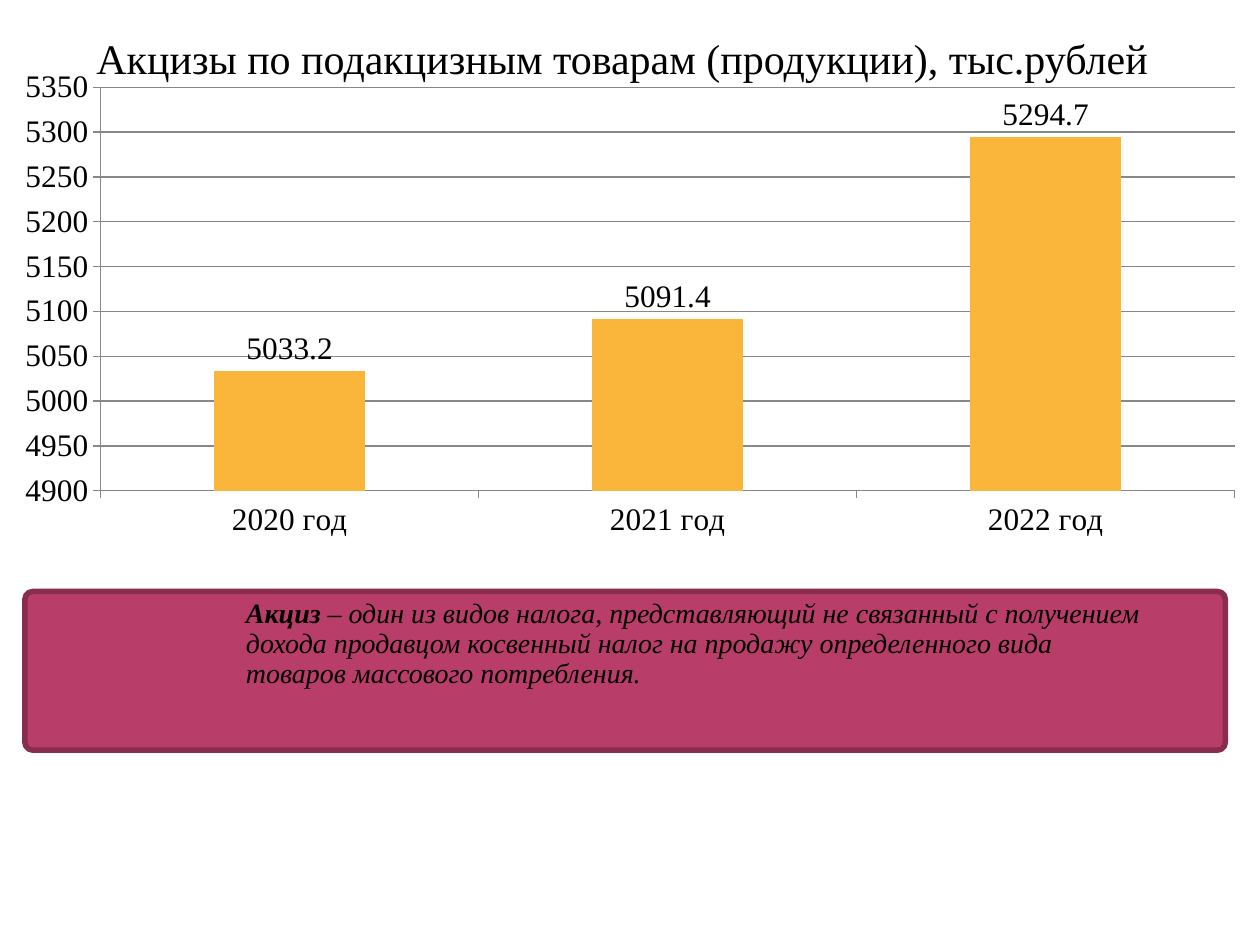
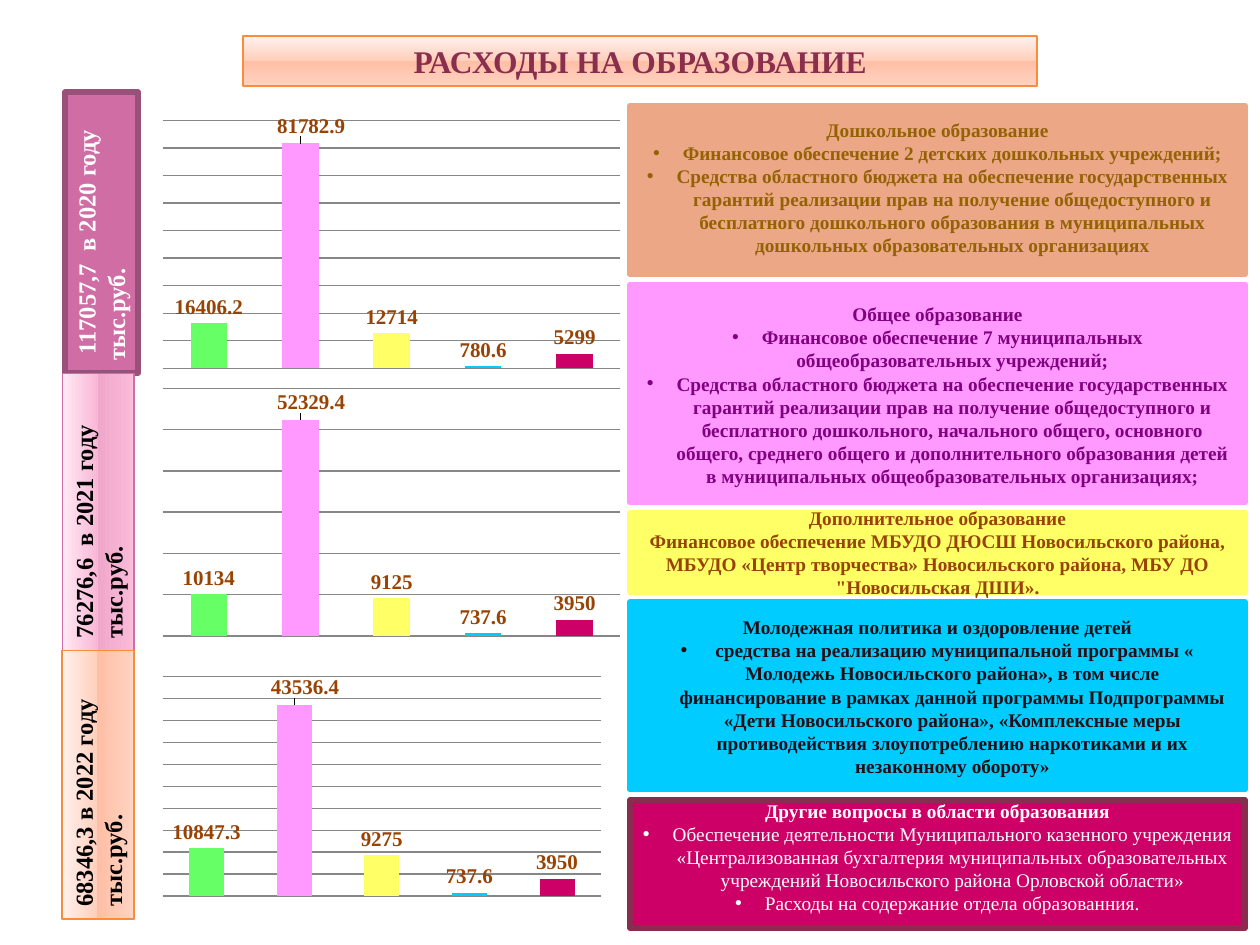
from lxml import etree
from pptx import Presentation
from pptx.chart.data import CategoryChartData
from pptx.dml.color import RGBColor
from pptx.enum.chart import XL_CHART_TYPE, XL_LABEL_POSITION, XL_TICK_MARK
from pptx.enum.shapes import MSO_SHAPE
from pptx.enum.text import MSO_ANCHOR, MSO_AUTO_SIZE, PP_ALIGN
from pptx.oxml.ns import qn
from pptx.util import Pt

COLUMNS = XL_CHART_TYPE.COLUMN_CLUSTERED
OUTSIDE_END = XL_LABEL_POSITION.OUTSIDE_END
TICK_OUTSIDE = XL_TICK_MARK.OUTSIDE
RECTANGLE = MSO_SHAPE.RECTANGLE
ROUNDED = MSO_SHAPE.ROUNDED_RECTANGLE
TOP, MIDDLE = MSO_ANCHOR.TOP, MSO_ANCHOR.MIDDLE
LEFT, CENTER = PP_ALIGN.LEFT, PP_ALIGN.CENTER
NO_AUTOFIT = MSO_AUTO_SIZE.NONE

SERIF = "Times New Roman"
BLACK, WHITE = "000000", "FFFFFF"
RASPBERRY, WINE, BROWN, GRAY = "B83D68", "882D4D", "984204", "878787"
ORANGE, MAUVE = "FA8D3D", "CF6DA4"
PEACH_GLOSS = ("FFF2EE", "FFCFBD", "FFBFA5", "FFCFBD", "FFD7C8")
PINK_GLOSS = ("FFEAF4", "F9B7D7", "EFA7CB", "F9B7D7", "F8C4DD")
GLOSS_STOPS = (0, 49, 49, 92, 100)
SECTOR_COLORS = ("66FF66", "FF99FF", "FFFF66", "00CCFF", "CC0066")
THICK, THIN = 3.15, 0.9
INSETS = (7.2, 3.6, 7, 3.6)
BULLET_INDENT = 17


def rgb(color):
    return RGBColor.from_string(color)


class Deck:
    def __init__(self):
        self.presentation = Presentation()
        self.presentation.slide_width = Pt(720)
        self.presentation.slide_height = Pt(540)
        self.slide = None

    def add_slide(self):
        layout = self.presentation.slide_layouts[5]
        self.slide = self.presentation.slides.add_slide(layout)

    def font(self, font, size, color, bold=False, italic=False):
        font.name = SERIF
        font.size = Pt(size)
        font.bold = bold
        font.italic = italic
        font.color.rgb = rgb(color)

    def paint(self, shape, fill, line, width):
        if isinstance(fill, str):
            shape.fill.solid()
            shape.fill.fore_color.rgb = rgb(fill)
        else:
            shape.fill.gradient()
            shape.fill.gradient_angle = 270
            stops = shape.element.spPr.find(qn("a:gradFill")).find(qn("a:gsLst"))
            for stop in list(stops):
                stops.remove(stop)
            for position, color in zip(GLOSS_STOPS, fill):
                stop = etree.SubElement(stops, qn("a:gs"), pos=str(position * 1000))
                etree.SubElement(stop, qn("a:srgbClr"), val=color)
        shape.line.color.rgb = rgb(line)
        shape.line.width = Pt(width)

    def frame(self, shape, anchor, insets=INSETS):
        frame = shape.text_frame
        frame.word_wrap = True
        frame.auto_size = NO_AUTOFIT
        frame.vertical_anchor = anchor
        frame.margin_left, frame.margin_top, frame.margin_right, frame.margin_bottom = map(Pt, insets)
        return frame

    def paragraph(self, frame, runs, align, size, color, bulleted=False, spacing=None):
        first = frame.paragraphs[0]
        paragraph = frame.add_paragraph() if first.runs else first
        paragraph.alignment = align
        if spacing:
            paragraph.line_spacing = spacing
        if bulleted:
            properties = paragraph._p.get_or_add_pPr()
            properties.set("marL", str(Pt(BULLET_INDENT)))
            properties.set("indent", str(-Pt(BULLET_INDENT)))
            etree.SubElement(properties, qn("a:buFont"), typeface="Arial")
            etree.SubElement(properties, qn("a:buChar"), char="•")
        for text, bold, italic in runs:
            run = paragraph.add_run()
            run.text = text
            self.font(run.font, size, color, bold, italic)

    def title(self, text, box, size, color, bold=False):
        title = self.slide.shapes.title
        title.left, title.top, title.width, title.height = map(Pt, box)
        frame = self.frame(title, MIDDLE)
        self.paragraph(frame, [(text, bold, False)], CENTER, size, color)
        return title

    def block(self, kind, box, fill, line, width):
        shape = self.slide.shapes.add_shape(kind, *map(Pt, box))
        shape.shadow.inherit = False
        self.paint(shape, fill, line, width)
        return shape

    def text_box(self, box, insets):
        return self.frame(self.slide.shapes.add_textbox(*map(Pt, box)), TOP, insets)

    def year_label(self, box, lines, fill, line, width, color):
        shape = self.block(RECTANGLE, box, fill, line, width)
        shape.rotation = 270
        frame = self.frame(shape, TOP)
        for text in lines:
            self.paragraph(frame, [(text, True, False)], LEFT, 14, color)

    def panel(self, box, fill, line, color, heading, items, bulleted, bold, shift):
        shape = self.block(RECTANGLE, box, fill, line, THICK)
        left, top, right, bottom = INSETS
        insets = (left, top + max(shift, 0), right, bottom + max(-shift, 0))
        frame = self.frame(shape, MIDDLE, insets)
        self.paragraph(frame, [(heading, True, False)], CENTER, 11, color)
        for item in items:
            self.paragraph(frame, [(item, bold, False)], CENTER, 11, color, bulleted)

    def column_chart(self, box, plot, categories, values, scale, label, colors=None):
        data = CategoryChartData()
        data.categories = categories
        data.add_series("Series 1", values)
        chart = self.slide.shapes.add_chart(COLUMNS, *map(Pt, box), data).chart
        chart.has_legend = False
        chart.has_title = False
        self.font(chart.font, 17.9, BLACK)
        area = chart.element.find(qn("c:chart")).find(qn("c:plotArea"))
        layout = area.find(qn("c:layout"))
        if layout is None:
            layout = etree.Element(qn("c:layout"))
            area.insert(0, layout)
        modes = [("layoutTarget", "inner"), ("xMode", "edge"), ("yMode", "edge")]
        self.manual_layout(layout, modes + list(zip("xywh", plot)))

        axis = chart.value_axis
        axis.minimum_scale, axis.maximum_scale, axis.major_unit = scale
        axis.has_major_gridlines = True
        for line in (axis.major_gridlines.format.line, axis.format.line, chart.category_axis.format.line):
            line.color.rgb = rgb(GRAY)
            line.width = Pt(0.75)
        for each in (axis, chart.category_axis):
            each.visible = colors is None
            each.major_tick_mark = TICK_OUTSIDE

        columns = chart.plots[0]
        columns.gap_width = 150
        columns.vary_by_categories = False
        series = columns.series[0]
        series.format.fill.solid()
        series.format.fill.fore_color.rgb = rgb("FAB63A" if colors is None else RASPBERRY)
        labels = series.data_labels
        labels.show_value = True
        labels.position = OUTSIDE_END
        self.font(labels.font, *label)
        for index, color in enumerate(colors or ()):
            fill = series.points[index].format.fill
            fill.solid()
            fill.fore_color.rgb = rgb(color)
        if colors:
            self.nudge_label(series.points[1].data_label, labels, label)

    def nudge_label(self, data_label, labels, label):
        self.font(data_label.font, *label)
        data_label.position = OUTSIDE_END
        element = labels._element.find(qn("c:dLbl"))
        layout = etree.Element(qn("c:layout"))
        element.find(qn("c:idx")).addnext(layout)
        self.manual_layout(layout, [("x", 0.023), ("y", -0.005)])

    def manual_layout(self, layout, settings):
        manual = etree.SubElement(layout, qn("c:manualLayout"))
        for name, value in settings:
            etree.SubElement(manual, qn("c:" + name), val=str(value))


def excise_slide(deck):
    deck.add_slide()
    deck.title("Акцизы по подакцизным товарам (продукции), тыс.рублей", (19.6, 14.6, 671.8, 36.7), 24, BLACK)
    deck.column_chart(
        (0, 34.6, 720, 277.9), (0.08, 0.055, 0.9, 0.83), ("2020 год", "2021 год", "2022 год"),
        (5033.2, 5091.4, 5294.7), (4900, 5350, 50), (17.9, BLACK))
    definition = deck.block(ROUNDED, (14.2, 338, 686, 90.7), RASPBERRY, WINE, THICK)
    definition.adjustments[0] = 0.05
    frame = deck.text_box((140.6, 338, 511.2, 90.7), (0, 4.3, 0, 0))
    deck.paragraph(frame, [
        ("Акциз", True, True),
        (" – один из видов налога, представляющий не связанный с получением дохода продавцом "
         "косвенный налог на продажу определенного вида товаров массового потребления.", False, True),
    ], LEFT, 16, BLACK, spacing=0.9)


def education_slide(deck):
    deck.add_slide()
    title = deck.title("РАСХОДЫ НА ОБРАЗОВАНИЕ", (139, 20.5, 453.6, 28.8), 18, "8A2E4E", True)
    deck.paint(title, PEACH_GLOSS, ORANGE, THIN)

    year_labels = (
        ((-22.3, 112, 160.6, 41.8), " 117057,7  в 2020 году", MAUVE, "995179", THICK, WHITE),
        ((-23, 272.2, 158.4, 41), "76276,6  в 2021 году", PINK_GLOSS, MAUVE, THIN, BLACK),
        ((-20.7, 428, 153.4, 41), "68346,3 в 2022 году", PEACH_GLOSS, ORANGE, THIN, BLACK),
    )
    for box, total, fill, line, width, color in year_labels:
        deck.year_label(box, (total, "тыс.руб."), fill, line, width, color)

    wide_plot = (0.02, 0.022, 0.96, 0.96)
    charts = (
        (87.8, 65.5, wide_plot, (16406.2, 81782.9, 12714, 780.6, 5299), (0, 90000, 10000)),
        (87.8, 218.6, wide_plot, (10134, 52329.4, 9125, 737.6, 3950), (0, 60000, 10000)),
        (82.1, 377.8, (0.04, 0.06, 0.92, 0.85), (10847.3, 43536.4, 9275, 737.6, 3950), (0, 50000, 5000)),
    )
    for left, top, plot, values, scale in charts:
        deck.column_chart((left, top, 272.2, 147.6), plot, ("1", "2", "3", "4", "5"), values, scale,
                          (12, BROWN, True), SECTOR_COLORS)

    guarantees = ("Средства областного бюджета на обеспечение государственных гарантий реализации прав "
                  "на получение общедоступного и бесплатного дошкольного")
    panels = (
        (96.5, "EBA786", "EBA786", "946204", "Дошкольное образование", (
            "Финансовое обеспечение 2 детских дошкольных учреждений;",
            guarantees + " образования в муниципальных дошкольных образовательных организациях",
        ), True, True, -3),
        (124.6, "FF99FF", "FF99FF", "800080", "Общее образование", (
            "Финансовое обеспечение 7 муниципальных общеобразовательных учреждений;",
            guarantees + ", начального общего, основного общего, среднего общего и дополнительного "
            "образования детей в муниципальных общеобразовательных организациях;",
        ), True, True, 1.5),
        (45.4, "FFFF66", "FFFF66", BROWN, "Дополнительное образование", (
            "Финансовое обеспечение МБУДО ДЮСШ Новосильского района, МБУДО «Центр творчества» "
            "Новосильского района, МБУ ДО \"Новосильская ДШИ».",
        ), False, True, 0),
        (107.3, "00CCFF", "00CCFF", "210F17", "Молодежная политика и оздоровление детей", (
            " средства на реализацию муниципальной программы « Молодежь Новосильского района», "
            "в том числе финансирование в рамках данной программы Подпрограммы «Дети Новосильского "
            "района», «Комплексные меры противодействия злоупотреблению наркотиками и их "
            "незаконному обороту»",
        ), True, True, 0.5),
        (73.4, "CC0066", WINE, WHITE, "Другие вопросы в области образования", (
            "Обеспечение деятельности Муниципального казенного учреждения «Централизованная "
            "бухгалтерия муниципальных образовательных учреждений Новосильского района Орловской "
            "области»",
            "Расходы на содержание отдела образованния.",
        ), True, False, -8),
    )
    top = 60.4
    for height, *content in panels:
        deck.panel((360, top, 351.4, height), *content)
        top += height + 5.7


def main():
    deck = Deck()
    excise_slide(deck)
    education_slide(deck)
    deck.presentation.save("out.pptx")


if __name__ == "__main__":
    main()
